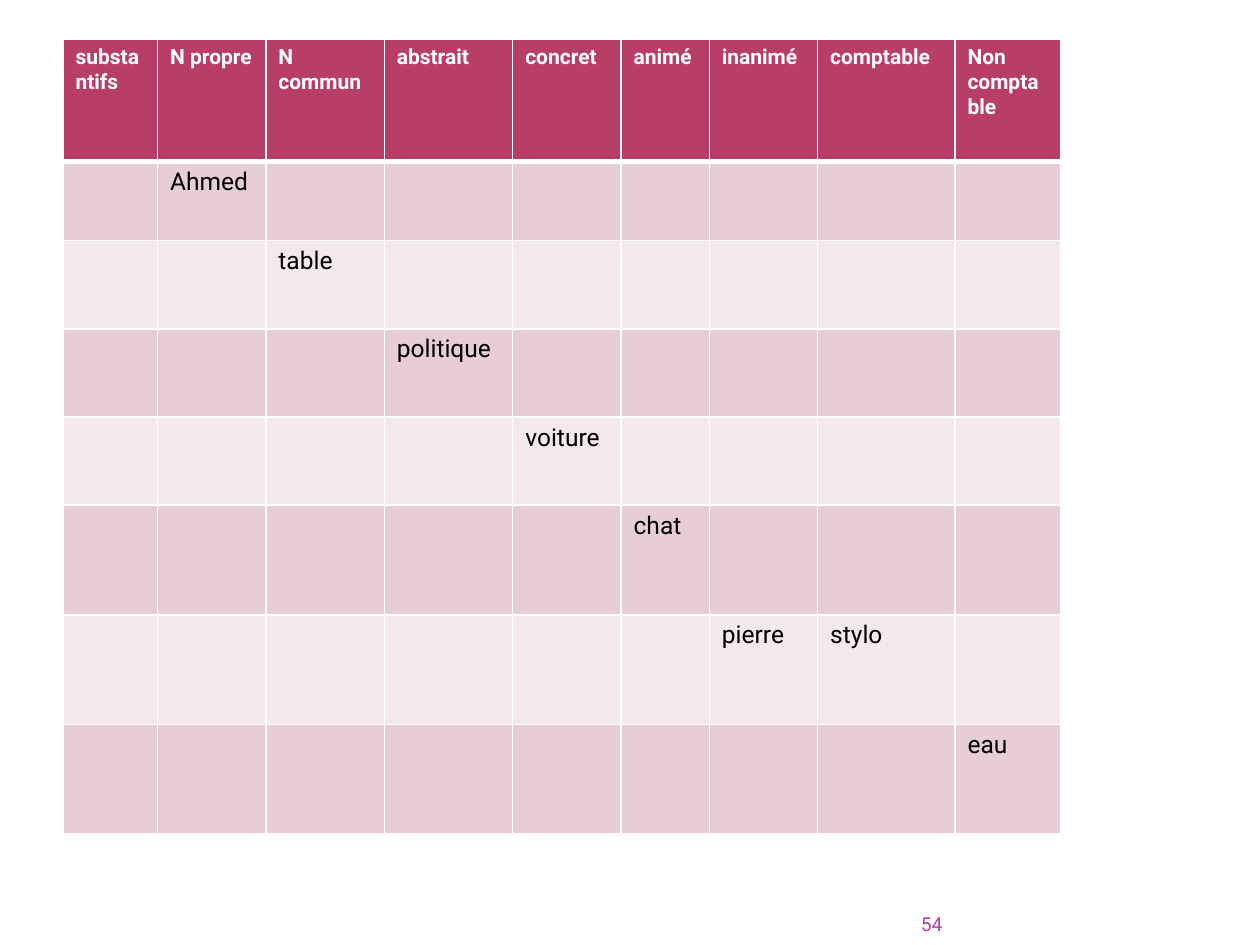
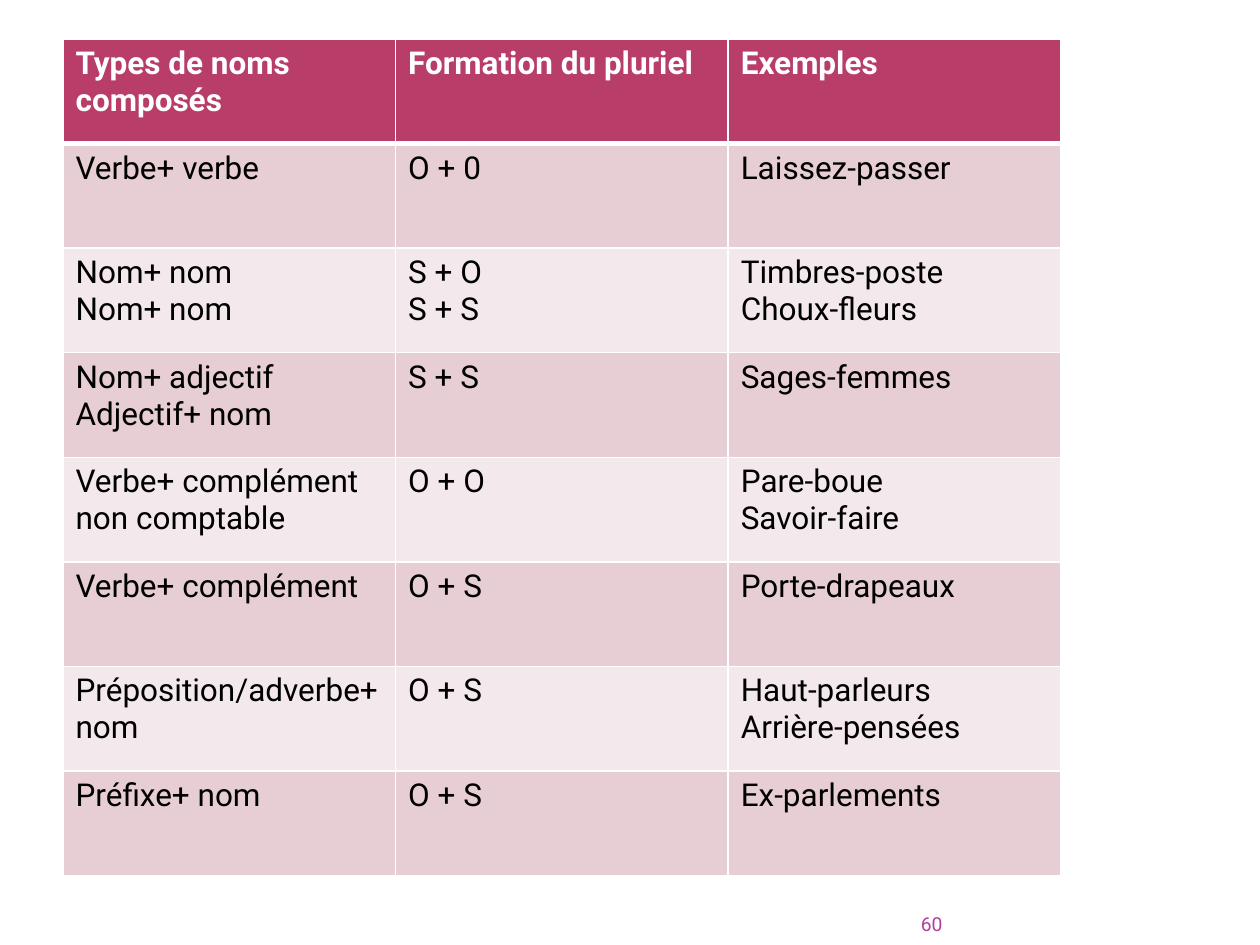
from dataclasses import dataclass

from lxml import etree
from pptx import Presentation
from pptx.dml.color import RGBColor
from pptx.enum import text
from pptx.oxml import ns
from pptx.util import Inches, Pt

COLORS = {
    "header": "B83D68",
    "odd": "E6CED4",
    "even": "F3E8EB",
    "white": "FFFFFF",
    "black": "000000",
    "number": "B13F9A",
}
FONT = "Roboto"
LEFT, TOP = 0.5, 0.31
THIN, THICK = 1, 3


@dataclass
class Lesson:
    number: str
    columns: list[float]
    rows: list[float]
    cells: list[list[str]]
    header_size: int
    body_size: int


def diagonal_rows(width: int, examples: list[dict[int, str]]) -> list[list[str]]:
    return [[row.get(column, "") for column in range(width)] for row in examples]


NOUN_CLASSES = ["substantifs", "N propre", "N\ncommun", "abstrait", "concret",
                "animé", "inanimé", "comptable", "Non comptable"]
NOUN_EXAMPLES = [{1: "Ahmed"}, {2: "table"}, {3: "politique"}, {4: "voiture"},
                 {5: "chat"}, {6: "pierre", 7: "stylo"}, {8: "eau"}]
COMPOUND_PLURALS = [
    ["Types de noms composés", "Formation du pluriel", "Exemples"],
    ["Verbe+ verbe", "O + 0", "Laissez-passer"],
    ["Nom+ nom\nNom+ nom", "S + O\nS + S", "Timbres-poste\nChoux-fleurs"],
    ["Nom+ adjectif\nAdjectif+ nom", "S + S", "Sages-femmes"],
    ["Verbe+ complément non comptable", "O + O", "Pare-boue\nSavoir-faire"],
    ["Verbe+ complément", "O + S", "Porte-drapeaux"],
    ["Préposition/adverbe+ nom", "O + S", "Haut-parleurs\nArrière-pensées"],
    ["Préfixe+ nom", "O + S", "Ex-parlements"],
]

LESSONS = [
    Lesson("54", [0.75, 0.86, 0.94, 1.02, 0.86, 0.7, 0.86, 1.09, 0.84],
           [0.97, 0.63] + [0.7] * 3 + [0.87] * 3,
           [NOUN_CLASSES] + diagonal_rows(len(NOUN_CLASSES), NOUN_EXAMPLES), 12, 14),
    Lesson("60", [2.64] * 3, [0.83] * len(COMPOUND_PLURALS), COMPOUND_PLURALS, 18, 18),
]


def style_font(font, size: int, color: str, bold: bool = False) -> None:
    font.name = FONT
    font.size = Pt(size)
    font.bold = bold
    font.color.rgb = RGBColor.from_string(COLORS[color])


def add_borders(cell, top: int, bottom: int) -> None:
    properties = cell._tc.get_or_add_tcPr()
    for side, width in {"L": THIN, "R": THIN, "T": top, "B": bottom}.items():
        line = etree.SubElement(properties, ns.qn(f"a:ln{side}"), w=str(Pt(width)))
        solid = etree.SubElement(line, ns.qn("a:solidFill"))
        etree.SubElement(solid, ns.qn("a:srgbClr"), val=COLORS["white"])


def fill_cell(cell, words: str, row: int, lesson: Lesson) -> None:
    is_header = row == 0
    add_borders(cell, THICK if row == 1 else THIN, THICK if is_header else THIN)
    cell.fill.solid()
    band = "header" if is_header else "odd" if row % 2 else "even"
    cell.fill.fore_color.rgb = RGBColor.from_string(COLORS[band])
    cell.text = words
    for paragraph in cell.text_frame.paragraphs:
        if is_header:
            style_font(paragraph.font, lesson.header_size, "white", True)
        else:
            style_font(paragraph.font, lesson.body_size, "black")


def add_grid(slide, lesson: Lesson) -> None:
    grid = slide.shapes.add_table(
        len(lesson.rows), len(lesson.columns), Inches(LEFT), Inches(TOP),
        Inches(sum(lesson.columns)), Inches(sum(lesson.rows))).table
    for column, width in zip(grid.columns, lesson.columns):
        column.width = Inches(width)
    for row, height in zip(grid.rows, lesson.rows):
        row.height = Inches(height)
    for r, line in enumerate(lesson.cells):
        for c, words in enumerate(line):
            fill_cell(grid.cell(r, c), words, r, lesson)


def add_page_number(slide, number: str) -> None:
    frame = slide.shapes.add_textbox(
        Inches(6.84), Inches(7.17), Inches(0.64), Inches(0.25)).text_frame
    frame.margin_left = frame.margin_right = frame.margin_top = frame.margin_bottom = 0
    frame.word_wrap = True
    frame.vertical_anchor = text.MSO_ANCHOR.BOTTOM
    frame.text = number
    paragraph = frame.paragraphs[0]
    paragraph.alignment = text.PP_ALIGN.RIGHT
    style_font(paragraph.font, 11, "number")


def main() -> None:
    deck = Presentation()
    deck.slide_width, deck.slide_height = Inches(10), Inches(7.5)
    blank = deck.slide_layouts[6]
    for lesson in LESSONS:
        slide = deck.slides.add_slide(blank)
        add_grid(slide, lesson)
        add_page_number(slide, lesson.number)
    deck.save("out.pptx")


if __name__ == "__main__":
    main()
